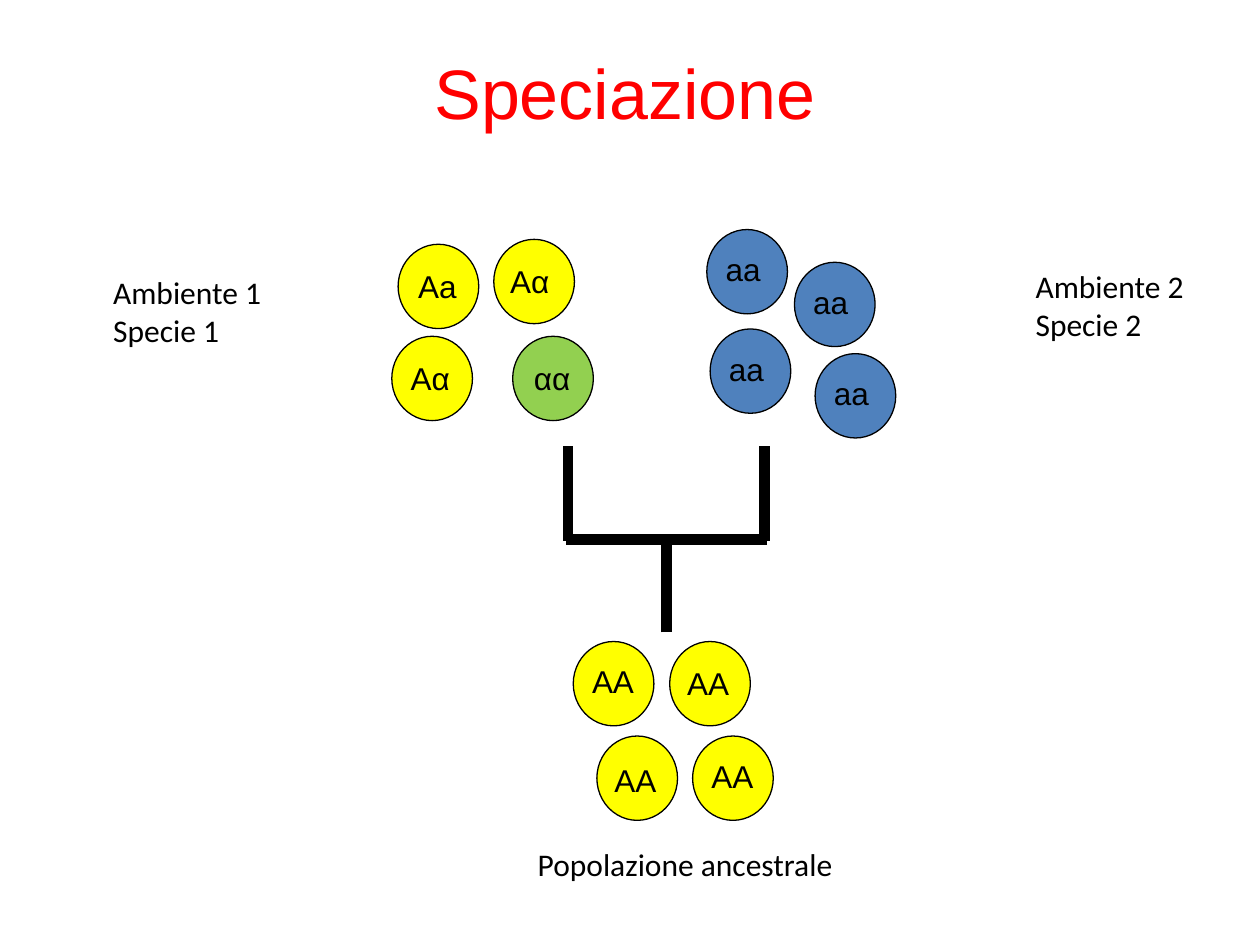
from dataclasses import dataclass

from lxml.etree import SubElement
from pptx import Presentation
from pptx.dml.color import RGBColor
from pptx.enum.shapes import MSO_CONNECTOR, MSO_SHAPE
from pptx.enum.text import MSO_AUTO_SIZE, PP_ALIGN
from pptx.oxml.ns import qn
from pptx.shapes.shapetree import GroupShapes, SlideShapes
from pptx.util import Pt

COLORS = {
    "black": "000000",
    "title": "FF0000",
    "yellow": "FFFF00",
    "green": "92D050",
    "blue": "4F81BD",
}
CIRCLE_SIZE = (46.1, 48.2)
GENOTYPE_SIZES = {
    "AA": (46.8, 36),
    "aa": (41.8, 36),
    "Aa": (43.9, 36),
    "Aα": (37.4, 28.8),
    "αα": (35.3, 28.8),
}


@dataclass(frozen=True)
class Caption:
    text: str
    left: float
    top: float
    width: float
    height: float
    font: str = "Calibri"
    size: float = 18
    color: str = "black"


@dataclass(frozen=True)
class Individual:
    genotype: str
    color: str
    left: float
    top: float
    text_dx: float = 3.6
    text_dy: float = 8.3


@dataclass(frozen=True)
class Branch:
    x1: float
    y1: float
    x2: float
    y2: float


CAPTIONS = [
    Caption("Speciazione", 241.2, 24.5, 234.7, 55.4, "Arial", 40, "title"),
    Caption("Ambiente 1\nSpecie 1", 57.6, 152.7, 100, 51),
    Caption("Ambiente 2\nSpecie 2", 584.7, 149, 100, 51),
    Caption("Popolazione ancestrale", 300.2, 479.5, 185, 29),
]
INDIVIDUALS = [
    Individual("Aa", "yellow", 227.5, 139.6, 4.3, 9.4),
    Individual("Aα", "yellow", 282.2, 136.8, 2.2, 9.4),
    Individual("Aα", "yellow", 223.9, 192.2, 3.6, 9.4),
    Individual("αα", "green", 293, 192.2, 5, 9.4),
    Individual("aa", "blue", 403.9, 131.2),
    Individual("aa", "blue", 454, 149.9),
    Individual("aa", "blue", 405.8, 188),
    Individual("aa", "blue", 465.8, 202.1),
    Individual("AA", "yellow", 327.6, 366.6),
    Individual("AA", "yellow", 382.7, 366.6, 2.9, 9.4),
    Individual("AA", "yellow", 341.1, 420.6, 2.9, 10.8),
    Individual("AA", "yellow", 395.8, 420.6, 3.6, 8.6),
]
BRANCHES = [
    Branch(323.3, 308.2, 438.5, 308.2),
    Branch(380.9, 361.4, 380.9, 308.2),
    Branch(437, 308.9, 437, 254.9),
    Branch(324.7, 308.9, 324.7, 254.9),
]


def rgb(name: str) -> RGBColor:
    return RGBColor.from_string(COLORS[name])


def add_caption(shapes: SlideShapes | GroupShapes, caption: Caption) -> None:
    shape = shapes.add_textbox(
        Pt(caption.left), Pt(caption.top), Pt(caption.width), Pt(caption.height)
    )
    text_frame = shape.text_frame
    text_frame.text = caption.text
    text_frame.word_wrap = False
    text_frame.auto_size = MSO_AUTO_SIZE.SHAPE_TO_FIT_TEXT
    for paragraph in text_frame.paragraphs:
        paragraph.alignment = PP_ALIGN.LEFT
        for run in paragraph.runs:
            run.font.name = caption.font
            run.font.size = Pt(caption.size)
            run.font.color.rgb = rgb(caption.color)


def add_individual(shapes: SlideShapes, individual: Individual) -> None:
    group = shapes.add_group_shape()
    width, height = CIRCLE_SIZE
    circle = group.shapes.add_shape(
        MSO_SHAPE.OVAL,
        Pt(individual.left),
        Pt(individual.top),
        Pt(width),
        Pt(height),
    )
    circle.shadow.inherit = False
    circle.fill.solid()
    circle.fill.fore_color.rgb = rgb(individual.color)
    circle.line.color.rgb = rgb("black")
    circle.line.width = Pt(0.75)
    add_caption(
        group.shapes,
        Caption(
            individual.genotype,
            individual.left + individual.text_dx,
            individual.top + individual.text_dy,
            *GENOTYPE_SIZES[individual.genotype],
            font="Arial",
        ),
    )


def add_branch(shapes: GroupShapes, branch: Branch) -> None:
    connector = shapes.add_connector(
        MSO_CONNECTOR.STRAIGHT,
        Pt(branch.x1),
        Pt(branch.y1),
        Pt(branch.x2),
        Pt(branch.y2),
    )
    connector.line.color.rgb = rgb("black")
    connector.line.width = Pt(6)
    SubElement(connector._element.spPr, qn("a:effectLst"))


def main() -> None:
    """Build the speciation slide and save it."""
    presentation = Presentation()
    presentation.slide_width = Pt(720)
    presentation.slide_height = Pt(540)
    slide = presentation.slides.add_slide(presentation.slide_layouts[6])
    for caption in CAPTIONS:
        add_caption(slide.shapes, caption)
    tree = slide.shapes.add_group_shape()
    for branch in BRANCHES:
        add_branch(tree.shapes, branch)
    for individual in INDIVIDUALS:
        add_individual(slide.shapes, individual)
    presentation.save("out.pptx")


if __name__ == "__main__":
    main()
